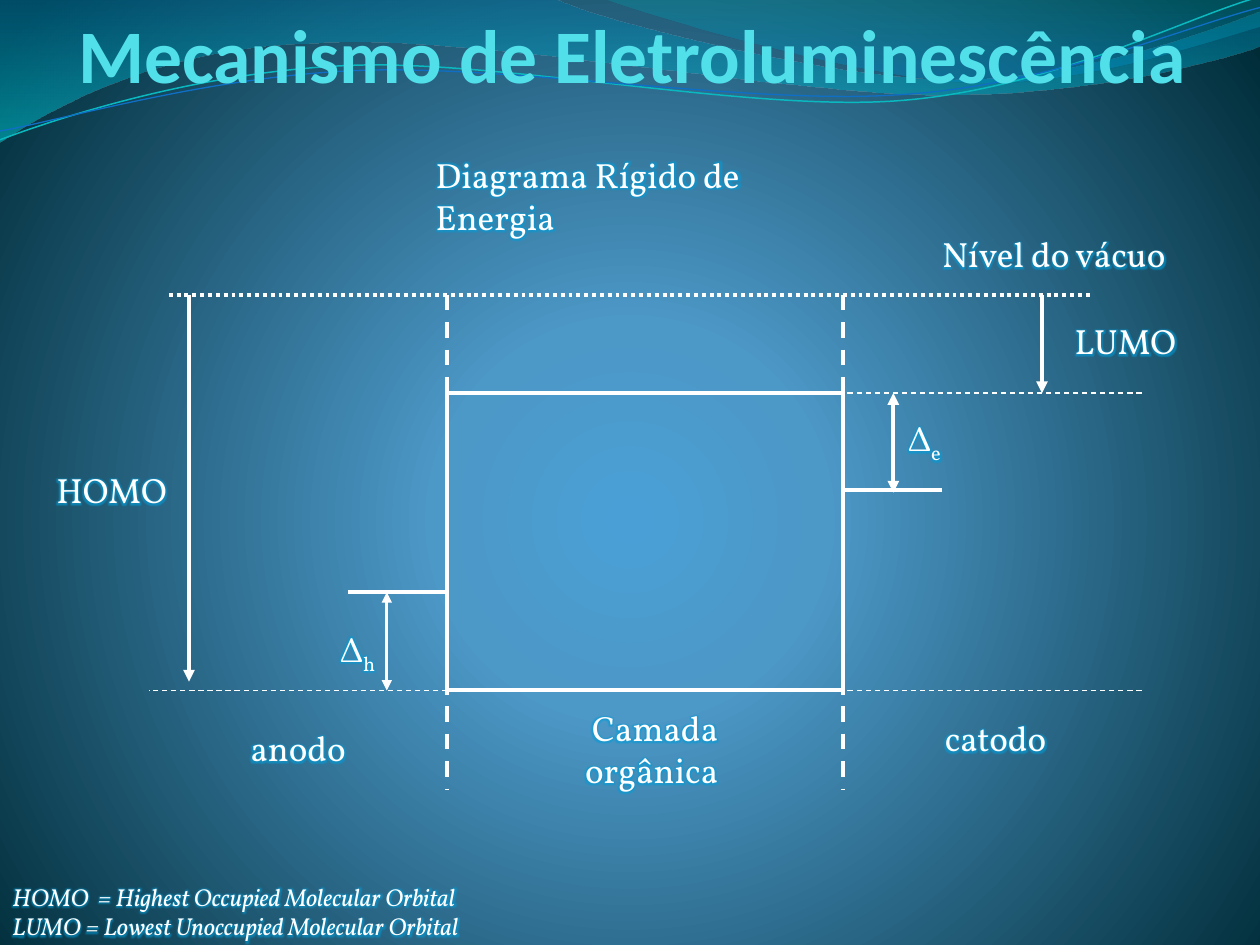
import math

from lxml import etree
from pptx import Presentation
from pptx.dml.color import RGBColor
from pptx.enum import dml, shapes, text
from pptx.oxml import parse_xml
from pptx.oxml.ns import nsdecls, qn
from pptx.util import Inches, Pt

THEME = dict(ink="FFFFFF", title="51E0EA", glow="009DD9", head="Calibri", body="Vollkorn",
             big=43.2, mid=20, small=14, thick=2.25, fine=0.75)

TITLE = "Mecanismo de Eletroluminescência"
NOTES = ["HOMO  = Highest Occupied Molecular Orbital",
         "LUMO = Lowest Unoccupied Molecular Orbital"]

# Energy levels (y) and edges of the organic layer (x)
VACUUM, LUMO, CATHODE, ANODE, HOMO, FOOT = 2.34, 3.12, 3.89, 4.7, 5.48, 6.27
LEFT, RIGHT, END = 3.55, 6.69, 9.06

# text, subscript, left, top, width, height
LABELS = [
    ("Δ", "e", 7.11, 3.26, 0.63, 0.44),
    ("Δ", "h", 2.6, 4.93, 0.71, 0.44),
    ("HOMO", "", 0.35, 3.67, 1.26, 0.44),
    ("LUMO", "", 8.43, 2.49, 1.26, 0.44),
    ("Nível do vácuo", "", 7.38, 1.8, 2.13, 0.44),
    ("anodo", "", 1.89, 5.72, 1.26, 0.44),
    ("catodo", "", 7.4, 5.64, 1.26, 0.44),
    ("Camada orgânica ", "", 4.49, 5.56, 1.42, 0.77),
    ("Diagrama Rígido de Energia", "", 3.36, 1.17, 3.59, 0.44),
]
CENTRED = {"Camada orgânica "}

DASH, DOT = dml.MSO_LINE.DASH, dml.MSO_LINE.ROUND_DOT
# x1, y1, x2, y2, width, dash, arrow ends
LINES = [
    (LEFT, HOMO, 1.18, HOMO, THEME["fine"], DASH, ""),
    (END, LUMO, RIGHT, LUMO, THEME["fine"], DASH, ""),
    (END, HOMO, RIGHT, HOMO, THEME["fine"], DASH, ""),
    (1.5, VACUUM, 1.5, 5.41, THEME["thick"], None, "tail"),
    (LEFT, ANODE, 2.76, ANODE, THEME["thick"], None, ""),
    (3.07, ANODE, 3.07, HOMO, 1.5, None, "head tail"),
    (7.48, CATHODE, RIGHT, CATHODE, THEME["thick"], None, ""),
    (LEFT, VACUUM, LEFT, FOOT, THEME["thick"], DASH, ""),
    (RIGHT, VACUUM, RIGHT, FOOT, THEME["thick"], DASH, ""),
    (1.34, VACUUM, 8.66, VACUUM, THEME["thick"], DOT, ""),
    (8.27, VACUUM, 8.27, LUMO, THEME["thick"], None, "tail"),
    (7.09, LUMO, 7.09, 3.91, THEME["thick"], None, "head tail"),
]

# Gradient stops: position, colour, opacity
SKY = [(0, "4AA0D6", 100), (25, "4C98C7", 100), (100, "002C38", 100)]
CIRCLE = '<a:path path="circle"><a:fillToRect l="10000" t="110000" r="10000" b="100000"/></a:path>'
DOWN = '<a:lin ang="5400000" scaled="0"/>'

# Each step holds one end point (straight) or three points (Bézier curve)
BANDS = [
    ([(0, "0074A1", 45), (100, "00C6CF", 55)],
     [(0, 0), (4.4, -0.01), (4.76, 0.17, 6.64, 0.63, 7.58, 0.63),
      (8.53, 0.63, 9.58, 0.26, 10, 0.09), (10.01, 0.36),
      (9.83, 0.44, 8.7, 0.76, 7.46, 0.75), (6.22, 0.75, 3.82, 0.28, 2.57, 0.34),
      (1.29, 0.36, 0.46, 0.83, -0.01, 1.13)]),
    ([(0, "00A1A9", 30), (80, "008BBF", 45)],
     [(4.79, -0.01), (5.09, 0.11, 6.82, 0.62, 7.69, 0.65),
      (8.56, 0.69, 9.61, 0.32, 10, 0.21), (10, 0)]),
]
TILT, PIVOT = -2.7, (5, 0.58)
WAVES = [
    ("0AB8BF", 0.85, [(0, 1.11), (0.48, 0.93, 1.58, 0.57, 2.77, 0.52),
                      (3.95, 0.47, 5.93, 0.89, 7.13, 0.8), (8.33, 0.71, 9.38, 0.15, 9.98, -0.02)]),
    ("0F6FC6", 0.75, [(0, 1.04), (0.47, 0.96, 1.64, 0.61, 2.83, 0.56),
                      (4.03, 0.51, 5.97, 0.84, 7.17, 0.75), (8.36, 0.67, 9.41, 0.21, 10, 0.06)]),
]


def blend(root, stops, way):
    """Put a gradient in place of the first empty fill under root."""
    marks = "".join(f'<a:gs pos="{pos * 1000}"><a:srgbClr val="{tint}">'
                    f'<a:alpha val="{alpha * 1000}"/></a:srgbClr></a:gs>'
                    for pos, tint, alpha in stops)
    old = root.find(".//" + qn("a:noFill"))
    old.getparent().replace(old, parse_xml(
        f'<a:gradFill {nsdecls("a")} rotWithShape="1"><a:gsLst>{marks}</a:gsLst>{way}</a:gradFill>'))


def turn(step, angle):
    """Rotate the points of a step about PIVOT."""
    cos, sin = math.cos(math.radians(angle)), math.sin(math.radians(angle))
    out = []
    for x, y in zip(step[::2], step[1::2]):
        dx, dy = x - PIVOT[0], y - PIVOT[1]
        out += [PIVOT[0] + dx * cos - dy * sin, PIVOT[1] + dx * sin + dy * cos]
    return out


def outline(slide, steps, close, tilt=0):
    """Draw steps as a freeform, with its curves as Bézier segments."""
    steps = [[Inches(v) for v in turn(step, -tilt)] for step in steps]
    pen = slide.shapes.build_freeform(*steps[0])
    pen.add_line_segments([step[-2:] for step in steps[1:]], close=close)
    shape = pen.convert_to_shape()
    shape.shadow.inherit = False
    shape.fill.background()
    for leg, step in zip(list(shape._element.iter(qn("a:lnTo"))), steps[1:]):
        if len(step) > 2:
            curve = etree.Element(qn("a:cubicBezTo"))
            for x, y in zip(step[::2], step[1::2]):
                etree.SubElement(curve, qn("a:pt"), x=str(x - shape.left), y=str(y - shape.top))
            leg.getparent().replace(leg, curve)
    shape.rotation = tilt
    return shape


def stroke(line, tint, width):
    line.color.rgb = RGBColor.from_string(tint)
    line.width = Pt(width)


def rule(slide, x1, y1, x2, y2, width, dash, ends):
    link = slide.shapes.add_connector(shapes.MSO_CONNECTOR.STRAIGHT,
                                      *map(Inches, (x1, y1, x2, y2)))
    stroke(link.line, THEME["ink"], width)
    if dash:
        link.line.dash_style = dash
    props = link._element.spPr
    for end in ends.split():
        etree.SubElement(props.find(qn("a:ln")), qn(f"a:{end}End"), type="triangle")
    etree.SubElement(props, qn("a:effectLst"))


def style(para, face, size, tint):
    para.font.name, para.font.size = face, Pt(size)
    para.font.color.rgb = RGBColor.from_string(tint)


def glow(run):
    run._r.get_or_add_rPr().append(parse_xml(
        f'<a:effectLst {nsdecls("a")}><a:glow rad="63500"><a:srgbClr val="{THEME["glow"]}">'
        '<a:alpha val="60000"/></a:srgbClr></a:glow></a:effectLst>'))


def write(slide, lines, left, top, width, height, size, sub=""):
    """Add a text box and return its paragraphs."""
    frame = slide.shapes.add_textbox(*map(Inches, (left, top, width, height))).text_frame
    frame.word_wrap = True
    frame.auto_size = text.MSO_AUTO_SIZE.SHAPE_TO_FIT_TEXT
    frame.text = "\n".join(lines)
    if sub:
        run = frame.paragraphs[0].add_run()
        run.text = sub
        run._r.get_or_add_rPr().set("baseline", "-25000")
    for para in frame.paragraphs:
        style(para, THEME["body"], size, THEME["ink"])
        for run in para.runs:
            glow(run)
    return frame.paragraphs


def main():
    deck = Presentation()
    deck.slide_width, deck.slide_height = Inches(10), Inches(7.5)
    slide = deck.slides.add_slide(deck.slide_layouts[5])
    slide.background.fill.background()
    blend(slide._element, SKY, CIRCLE)

    for stops, steps in BANDS:
        band = outline(slide, steps, True)
        band.line.fill.background()
        blend(band._element, stops, DOWN)
    for tint, width, steps in WAVES:
        stroke(outline(slide, steps, False, TILT).line, tint, width)

    layer = slide.shapes.add_shape(shapes.MSO_SHAPE.RECTANGLE, *map(
        Inches, (LEFT, LUMO, RIGHT - LEFT, HOMO - LUMO)))
    layer.shadow.inherit = False
    layer.fill.background()
    stroke(layer.line, THEME["ink"], THEME["thick"])
    for line in LINES:
        rule(slide, *line)

    for label, low, *place in LABELS:
        para = write(slide, [label], *place, THEME["mid"], low)[0]
        if label in CENTRED:
            para.alignment = text.PP_ALIGN.CENTER
    for para in write(slide, NOTES, 0, 6.95, 5, 0.57, THEME["small"]):
        para.font.italic = True

    title = slide.shapes.title
    title.left, title.top, title.width, title.height = map(Inches, (0.62, -0.08, 9.14, 0.86))
    frame = title.text_frame
    frame.text = TITLE
    frame.auto_size = text.MSO_AUTO_SIZE.NONE
    frame.vertical_anchor = text.MSO_ANCHOR.BOTTOM
    frame.margin_left = frame.margin_top = frame.margin_bottom = 0
    frame.margin_right = Inches(0.02)
    para = frame.paragraphs[0]
    para.alignment = text.PP_ALIGN.LEFT
    style(para, THEME["head"], THEME["big"], THEME["title"])
    para.font.bold = True
    slide.shapes._spTree.append(title._element)  # in front of the waves
    deck.save("out.pptx")


if __name__ == "__main__":
    main()
